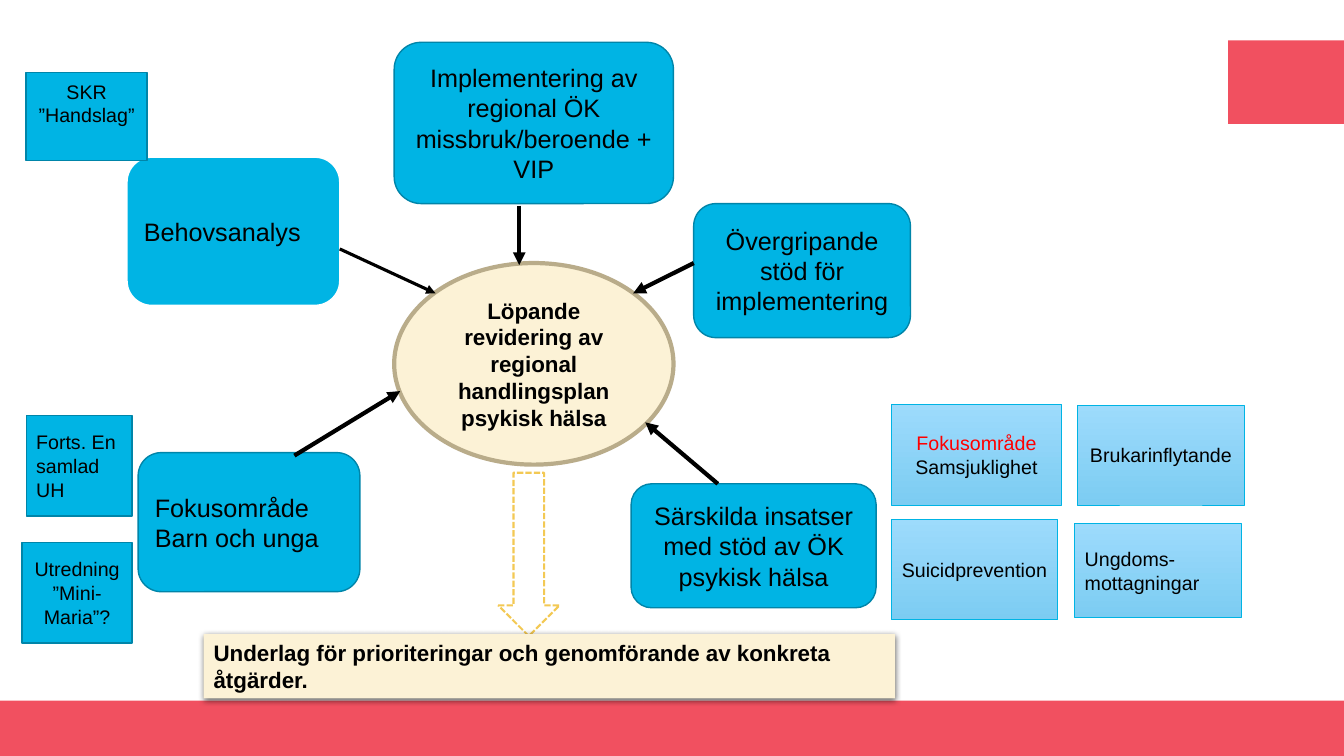
"""Draw the slide on the ongoing revision of a regional mental health plan."""
from lxml.etree import SubElement
from pptx import Presentation
from pptx.dml.color import RGBColor
from pptx.enum.dml import MSO_LINE
from pptx.enum.shapes import MSO_CONNECTOR, MSO_SHAPE
from pptx.enum.text import MSO_ANCHOR, PP_ALIGN
from pptx.oxml.ns import qn
from pptx.util import Inches, Pt

HUES = {
    "red": "F15060", "blue": "00B4E4", "edge": "0085A9", "white": "FFFFFF",
    "cream": "FCF2D6", "sand": "B9AC8A", "gold": "F3C954", "black": "000000",
    "alert": "FF0000", "sky": "9DDBFC", "haze": "7CCCF2",
}
CELL = Inches(0.1)
LEFT, MID = PP_ALIGN.LEFT, PP_ALIGN.CENTER


def hue(name):
    return RGBColor.from_string(HUES[name])


def apply(item, form):
    for key, val in form.items():
        setattr(item, key, val)


class Board:
    """Hold the style and the current slide, measured in grid cells."""

    def __init__(self, deck):
        self.font = {"name": "Arial"}
        self.frame = {"word_wrap": True, "vertical_anchor": MSO_ANCHOR.MIDDLE}
        self.slide = deck.slides.add_slide(deck.slide_layouts[6])

    def shape(self, kind, spot, fill=None, edge=None, width=1):
        item = self.slide.shapes.add_shape(kind, *(round(n * CELL) for n in spot))
        item.shadow.inherit = False
        if fill == "sky":
            item.fill.gradient()
            item.fill.gradient_angle = 270
            for stop, name in zip(item.fill.gradient_stops, ("sky", "haze")):
                stop.color.rgb = hue(name)
        elif fill:
            item.fill.solid()
            item.fill.fore_color.rgb = hue(fill)
        else:
            item.fill.background()
        if edge:
            item.line.color.rgb = hue(edge)
            item.line.width = Pt(width)
        else:
            item.line.fill.background()
        return item

    def text(self, item, parts, size, align=MID, bold=False, **frame):
        apply(item.text_frame, self.frame | frame)
        para = item.text_frame.paragraphs[0]
        para.alignment = align
        for words, tint in parts:
            run = para.add_run()
            run.text = words
            apply(run.font, self.font | {"size": Pt(size), "bold": bold})
            run.font.color.rgb = hue(tint)

    def node(self, words, spot, align=MID, edge="edge", **frame):
        item = self.shape(MSO_SHAPE.ROUNDED_RECTANGLE, spot, "blue", edge)
        self.text(item, [(words, "black")], 18, align, **frame)

    def note(self, parts, spot, align=MID, fill="blue", edge="edge", width=1, **frame):
        item = self.shape(MSO_SHAPE.RECTANGLE, spot, fill, edge, width)
        self.text(item, parts, 14, align, **frame)

    def arrow(self, ends, width=3):
        item = self.slide.shapes.add_connector(
            MSO_CONNECTOR.STRAIGHT, *(round(n * CELL) for n in ends))
        item.line.color.rgb = hue("black")
        item.line.width = Pt(width)
        SubElement(item.line._get_or_add_ln(), qn("a:tailEnd"), type="triangle")
        SubElement(item._element.spPr, qn("a:effectLst"))

    def shade(self, item):
        effects = item._element.spPr.find(qn("a:effectLst"))
        cast = SubElement(effects, qn("a:outerShdw"), blurRad=str(Pt(4.5)),
                          dist=str(Pt(1.5)), dir="5400000", rotWithShape="0")
        tint = SubElement(cast, qn("a:srgbClr"), val=HUES["black"])
        SubElement(tint, qn("a:alpha"), val="63000")


def main():
    deck = Presentation()
    apply(deck, {"slide_width": Inches(13.33), "slide_height": Inches(7.5)})
    board = Board(deck)

    for spot in ((0, 69.5, 133.3, 5.5), (121.8, 4, 11.5, 8.3)):
        board.shape(MSO_SHAPE.RECTANGLE, spot, "red")

    for words, spot, align in (
        ("Särskilda insatser med stöd av ÖK psykisk hälsa", (62.6, 48, 24.3, 12.3), MID),
        ("Implementering av regional ÖK missbruk/beroende + VIP",
         (39.1, 4.2, 27.7, 16), MID),
        ("Övergripande stöd för implementering", (68.8, 20.2, 21.5, 13.3), MID),
        ("Fokusområde Barn och unga", (13.7, 44.9, 22, 13.8), LEFT),
    ):
        board.node(words, spot, align)
    board.node("Behovsanalys", (12.6, 15.6, 21.1, 14.7), edge="white",
               margin_left=0, margin_right=Inches(0.22))

    core = board.shape(MSO_SHAPE.OVAL, (39.1, 26.1, 27.7, 20), "cream", "sand", 3)
    board.text(core, [("Löpande revidering av regional handlingsplan psykisk hälsa",
                       "black")], 16, bold=True)

    for parts, spot, align in (
        ([("Ungdoms-mottagningar", "black")], (106.6, 51.9, 16.5, 9.4), LEFT),
        ([("Brukarinflytande", "black")], (106.9, 40.2, 16.5, 9.9), MID),
        ([("Suicidprevention", "black")], (88.4, 51.5, 16.5, 10), MID),
        ([("Fokusområde ", "alert"), ("Samsjuklighet", "black")],
         (88.4, 40.1, 16.9, 10), MID),
    ):
        board.note(parts, spot, align, "sky", "blue", 0.5)

    board.note([("Forts. En samlad UH", "black")], (2.6, 41.2, 10.5, 10), LEFT)
    board.note([("Utredning ”Mini-Maria”?", "black")], (2.2, 53.8, 10.9, 10))
    board.note([("SKR ”Handslag”", "black")], (2.6, 7.2, 12, 8.7),
               vertical_anchor=MSO_ANCHOR.TOP, margin_top=Inches(0.07))

    for ends in (
        (29.2, 45.2, 39.7, 38.8), (51.5, 20.4, 51.5, 26.3),
        (68.8, 26.1, 62.8, 29.1), (71.2, 48, 64, 41.9),
    ):
        board.arrow(ends)
    board.arrow((33.7, 24.7, 43.2, 29.1), 2.25)

    down = board.shape(MSO_SHAPE.DOWN_ARROW, (49.4, 46.9, 6.1, 16.2), None, "gold", 1.5)
    down.line.dash_style = MSO_LINE.SQUARE_DOT

    base = board.shape(MSO_SHAPE.RECTANGLE, (20.2, 62.9, 68.6, 6.4), "cream")
    board.shade(base)
    board.text(base, [("Underlag för prioriteringar och genomförande av konkreta åtgärder.",
                       "black")], 16, LEFT, True, vertical_anchor=MSO_ANCHOR.TOP)

    deck.save("out.pptx")


if __name__ == "__main__":
    main()
